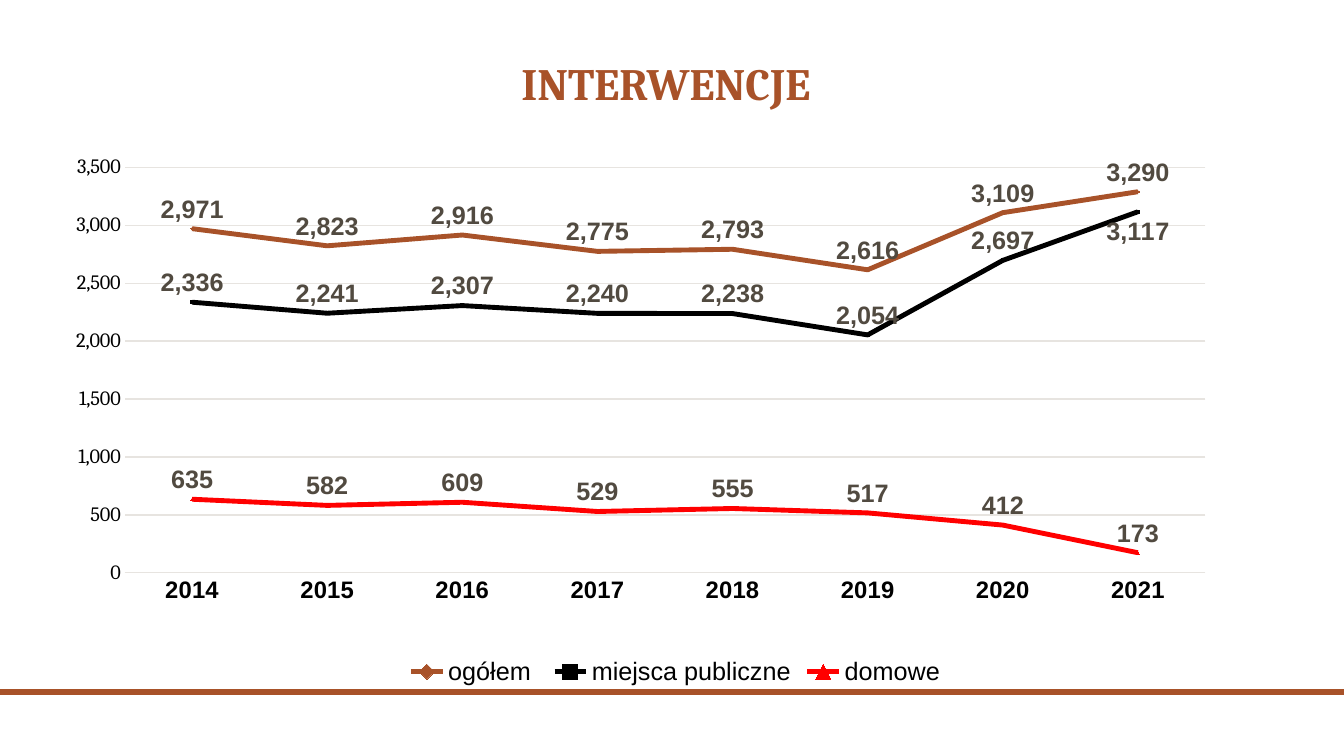
from lxml import etree
from pptx import Presentation
from pptx.chart.data import CategoryChartData
from pptx.dml.color import RGBColor
from pptx.enum.chart import (XL_CHART_TYPE, XL_LABEL_POSITION, XL_LEGEND_POSITION,
                             XL_MARKER_STYLE, XL_TICK_MARK)
from pptx.enum.shapes import MSO_SHAPE
from pptx.enum.text import MSO_ANCHOR, PP_ALIGN
from pptx.oxml.ns import qn
from pptx.util import Emu, Pt

LINE_MARKERS = XL_CHART_TYPE.LINE_MARKERS
ABOVE, BELOW = XL_LABEL_POSITION.ABOVE, XL_LABEL_POSITION.BELOW
LEGEND_BOTTOM = XL_LEGEND_POSITION.BOTTOM
NO_TICK = XL_TICK_MARK.NONE
DIAMOND, SQUARE, TRIANGLE = (XL_MARKER_STYLE.DIAMOND, XL_MARKER_STYLE.SQUARE,
                             XL_MARKER_STYLE.TRIANGLE)
RECTANGLE = MSO_SHAPE.RECTANGLE
MIDDLE, CENTER = MSO_ANCHOR.MIDDLE, PP_ALIGN.CENTER

PX = 914400 / 100.8
WIDTH, HEIGHT = 1344, 756
BROWN, BLACK, RED, GREY, GRID = "A85229", "000000", "FF0000", "514A40", "E7E4E0"
THOUSANDS = "#,##0"

YEARS = [str(year) for year in range(2014, 2022)]
INTERVENTIONS = [
    ("ogółem ", BROWN, DIAMOND, [2971, 2823, 2916, 2775, 2793, 2616, 3109, 3290]),
    ("miejsca publiczne", BLACK, SQUARE, [2336, 2241, 2307, 2240, 2238, 2054, 2697, 3117]),
    ("domowe", RED, TRIANGLE, [635, 582, 609, 529, 555, 517, 412, 173]),
]


def px(*lengths):
    return [Emu(round(length * PX)) for length in lengths]


def color(hex_code):
    return RGBColor.from_string(hex_code)


def set_font(font, name, size, hex_code, bold=False):
    font.name, font.size, font.bold = name, Pt(size), bold
    font.color.rgb = color(hex_code)


def set_line(line, hex_code, width):
    line.color.rgb = color(hex_code)
    line.width = Pt(width)


def add_footer_bar(slide, box):
    bar = slide.shapes.add_shape(RECTANGLE, *px(*box))
    bar.shadow.inherit = False
    bar.fill.solid()
    bar.fill.fore_color.rgb = color(BROWN)
    bar.line.fill.background()


def add_title(slide, box):
    frame = slide.shapes.add_textbox(*px(*box)).text_frame
    frame.word_wrap = True
    frame.vertical_anchor = MIDDLE
    title = frame.paragraphs[0]
    title.text = "INTERWENCJE"
    title.alignment = CENTER
    title.line_spacing = 0.9
    set_font(title.font, "Cambria", 32, BROWN, True)


def set_plot_layout(chart, **fractions):
    """Fix the inner plot area as fractions of the chart."""
    plot_area = chart.plots[0]._element.getparent()
    for old in plot_area.findall(qn("c:layout")):
        plot_area.remove(old)
    layout = etree.Element(qn("c:layout"))
    manual = etree.SubElement(layout, qn("c:manualLayout"))
    settings = {"layoutTarget": "inner", "xMode": "edge", "yMode": "edge", **fractions}
    for tag, value in settings.items():
        etree.SubElement(manual, qn(f"c:{tag}")).set("val", str(value))
    plot_area.insert(0, layout)


def style_axes(chart):
    years, counts = chart.category_axis, chart.value_axis
    for axis in (years, counts):
        axis.major_tick_mark = axis.minor_tick_mark = NO_TICK
    set_line(years.format.line, GRID, 0.91)
    set_font(years.tick_labels.font, "Arial", 17, BLACK, True)
    counts.minimum_scale, counts.maximum_scale, counts.major_unit = 0, 3500, 500
    counts.format.line.fill.background()
    set_line(counts.major_gridlines.format.line, GRID, 0.91)
    set_font(counts.tick_labels.font, "Cambria", 14.5, BLACK)
    counts.tick_labels.number_format = THOUSANDS
    counts.tick_labels.number_format_is_linked = False


def style_series(series, hex_code, marker_style):
    series.smooth = False
    set_line(series.format.line, hex_code, 3.48)
    marker = series.marker
    marker.style, marker.size = marker_style, 2
    marker.format.fill.solid()
    marker.format.fill.fore_color.rgb = color(hex_code)
    marker.format.line.color.rgb = color(hex_code)
    labels = series.data_labels
    labels.show_value = True
    labels.position = ABOVE
    labels.number_format = THOUSANDS
    labels.number_format_is_linked = False
    set_font(labels.font, "Arial", 18, GREY, True)


def add_interventions_chart(slide, box):
    data = CategoryChartData(number_format=THOUSANDS)
    data.categories = YEARS
    for name, _, _, counts in INTERVENTIONS:
        data.add_series(name, counts)
    chart = slide.shapes.add_chart(LINE_MARKERS, *px(*box), data).chart
    set_font(chart.font, "Cambria", 10, GREY)
    chart.has_title = False
    chart.plots[0].vary_by_categories = False
    set_plot_layout(chart, x=0.051, y=0.091, w=0.881, h=0.704)
    style_axes(chart)

    # Series and their value labels
    for series, (_, hex_code, marker_style, _) in zip(chart.plots[0].series, INTERVENTIONS):
        style_series(series, hex_code, marker_style)

    # The last public-places value sits under its line
    last_public = chart.plots[0].series[1].points[len(YEARS) - 1].data_label
    set_font(last_public.font, "Arial", 18, GREY, True)
    last_public.position = BELOW

    # Legend
    chart.has_legend = True
    chart.legend.position = LEGEND_BOTTOM
    chart.legend.include_in_layout = False
    set_font(chart.legend.font, "Arial", 18, BLACK)


def main():
    deck = Presentation()
    deck.slide_width, deck.slide_height = px(WIDTH, HEIGHT)
    slide = deck.slides.add_slide(deck.slide_layouts[6])
    add_footer_bar(slide, (0, 689, WIDTH, 6))
    add_title(slide, (366, 30, 600, 111))
    add_interventions_chart(slide, (62, 115, 1227, 576))
    deck.save("out.pptx")


if __name__ == "__main__":
    main()
